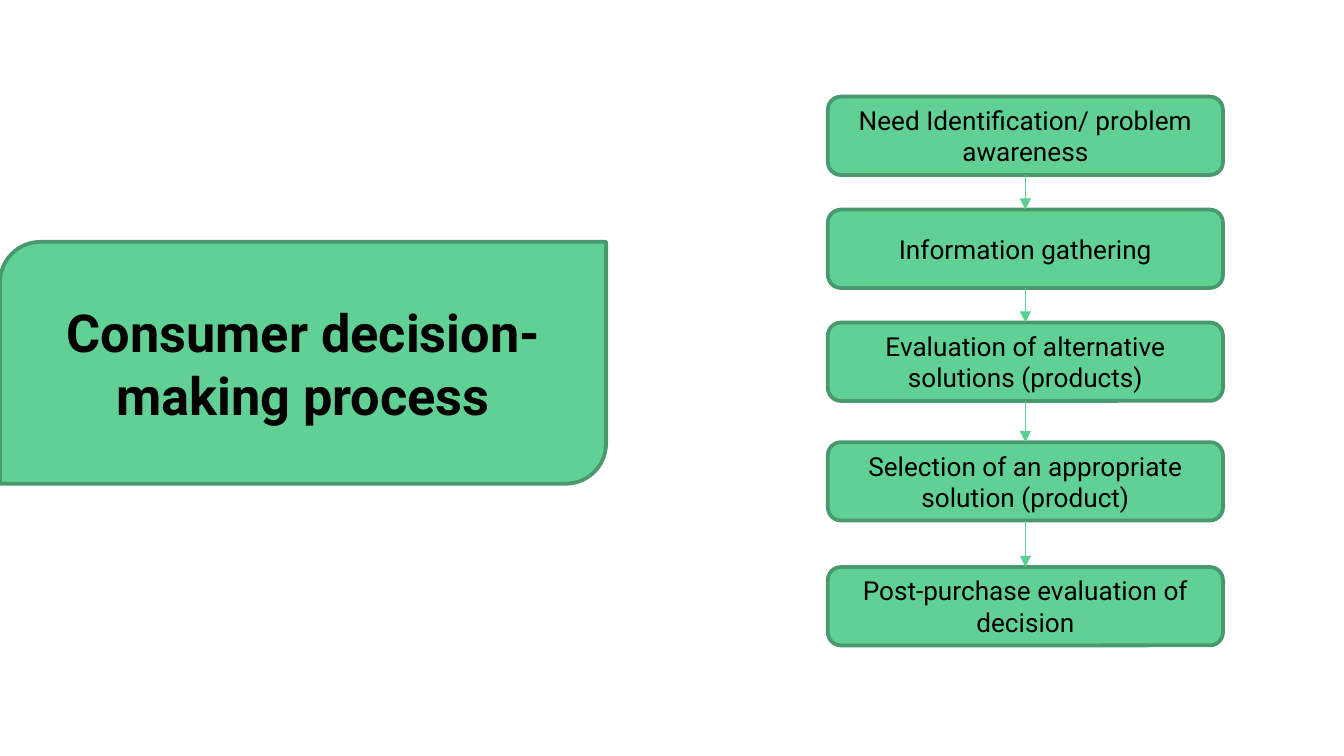
from dataclasses import dataclass
from itertools import pairwise

import lxml.etree
import pptx
import pptx.dml.color
import pptx.enum.shapes
import pptx.enum.text
import pptx.oxml.ns
import pptx.util

Pt = pptx.util.Pt
RGB = pptx.dml.color.RGBColor.from_string
SHAPES = pptx.enum.shapes.MSO_SHAPE
qn = pptx.oxml.ns.qn


@dataclass(frozen=True)
class Theme:
    fill: str = "61D095"
    border: str = "489A6E"
    arrow: str = "5CCE92"
    text: str = "000000"
    font: str = "Roboto"
    title_size: float = 28
    step_size: float = 14
    border_width: float = 2
    arrow_width: float = 0.75


@dataclass(frozen=True)
class Box:
    left: float
    top: float
    width: float
    height: float

    def lengths(self) -> list:
        return [Pt(v) for v in (self.left, self.top, self.width, self.height)]


@dataclass(frozen=True)
class Step:
    top: float
    text: str


THEME = Theme()
TITLE = "Consumer decision-making process"
TITLE_BOX = Box(0, 129.6, 324.7, 129.6)
STEP_LEFT, STEP_WIDTH, STEP_HEIGHT = 443.5, 211.7, 42
STEPS = (
    Step(51.8, "Need Identification/ problem awareness"),
    Step(112.3, "Information gathering"),
    Step(172.8, "Evaluation of alternative solutions (products)"),
    Step(236.9, "Selection of an appropriate solution (product)"),
    Step(303.8, "Post-purchase evaluation of decision"),
)


def set_attributes(target, values: dict) -> None:
    for name, value in values.items():
        setattr(target, name, value)


def write_text(sp, text: str, size: float, bold: bool = False) -> None:
    tf = sp.text_frame
    set_attributes(tf, {
        "word_wrap": True,
        "auto_size": pptx.enum.text.MSO_AUTO_SIZE.NONE,
        "vertical_anchor": pptx.enum.text.MSO_ANCHOR.MIDDLE,
    })
    p = tf.paragraphs[0]
    p.alignment = pptx.enum.text.PP_ALIGN.CENTER
    r = p.add_run()
    r.text = text
    set_attributes(r.font, {"name": THEME.font, "size": Pt(size), "bold": bold})
    r.font.color.rgb = RGB(THEME.text)


def add_panel(s, kind, box: Box):
    sp = s.shapes.add_shape(kind, *box.lengths())
    sp.shadow.inherit = False
    sp.fill.solid()
    sp.fill.fore_color.rgb = RGB(THEME.fill)
    sp.line.color.rgb = RGB(THEME.border)
    sp.line.width = Pt(THEME.border_width)
    return sp


def add_title(s) -> None:
    """Put the title placeholder in front of its green panel."""
    panel = add_panel(s, SHAPES.ROUND_2_DIAG_RECTANGLE, TITLE_BOX)
    title = s.shapes.title
    title.element.addprevious(panel.element)
    set_attributes(title, dict(zip(("left", "top", "width", "height"),
                                   TITLE_BOX.lengths())))
    write_text(title, TITLE, THEME.title_size, bold=True)


def add_step(s, step: Step):
    box = Box(STEP_LEFT, step.top, STEP_WIDTH, STEP_HEIGHT)
    sp = add_panel(s, SHAPES.ROUNDED_RECTANGLE, box)
    write_text(sp, step.text, THEME.step_size)
    return sp


def add_arrow(s, upper, lower) -> None:
    """Join the bottom of one step to the top of the next."""
    arrow = s.shapes.add_connector(
        pptx.enum.shapes.MSO_CONNECTOR.STRAIGHT, 0, 0, 0, 0)
    arrow.begin_connect(upper, 2)
    arrow.end_connect(lower, 0)
    arrow.line.color.rgb = RGB(THEME.arrow)
    arrow.line.width = Pt(THEME.arrow_width)
    sp_pr = arrow.element.spPr
    lxml.etree.SubElement(sp_pr.find(qn("a:ln")), qn("a:tailEnd"), type="triangle")
    lxml.etree.SubElement(sp_pr, qn("a:effectLst"))


def main() -> None:
    prs = pptx.Presentation()
    set_attributes(prs, {"slide_width": Pt(720), "slide_height": Pt(405)})
    s = prs.slides.add_slide(prs.slide_layouts.get_by_name("Title Only"))
    add_title(s)
    boxes = [add_step(s, step) for step in STEPS]
    for upper, lower in pairwise(boxes):
        add_arrow(s, upper, lower)
    prs.save("out.pptx")


if __name__ == "__main__":
    main()
